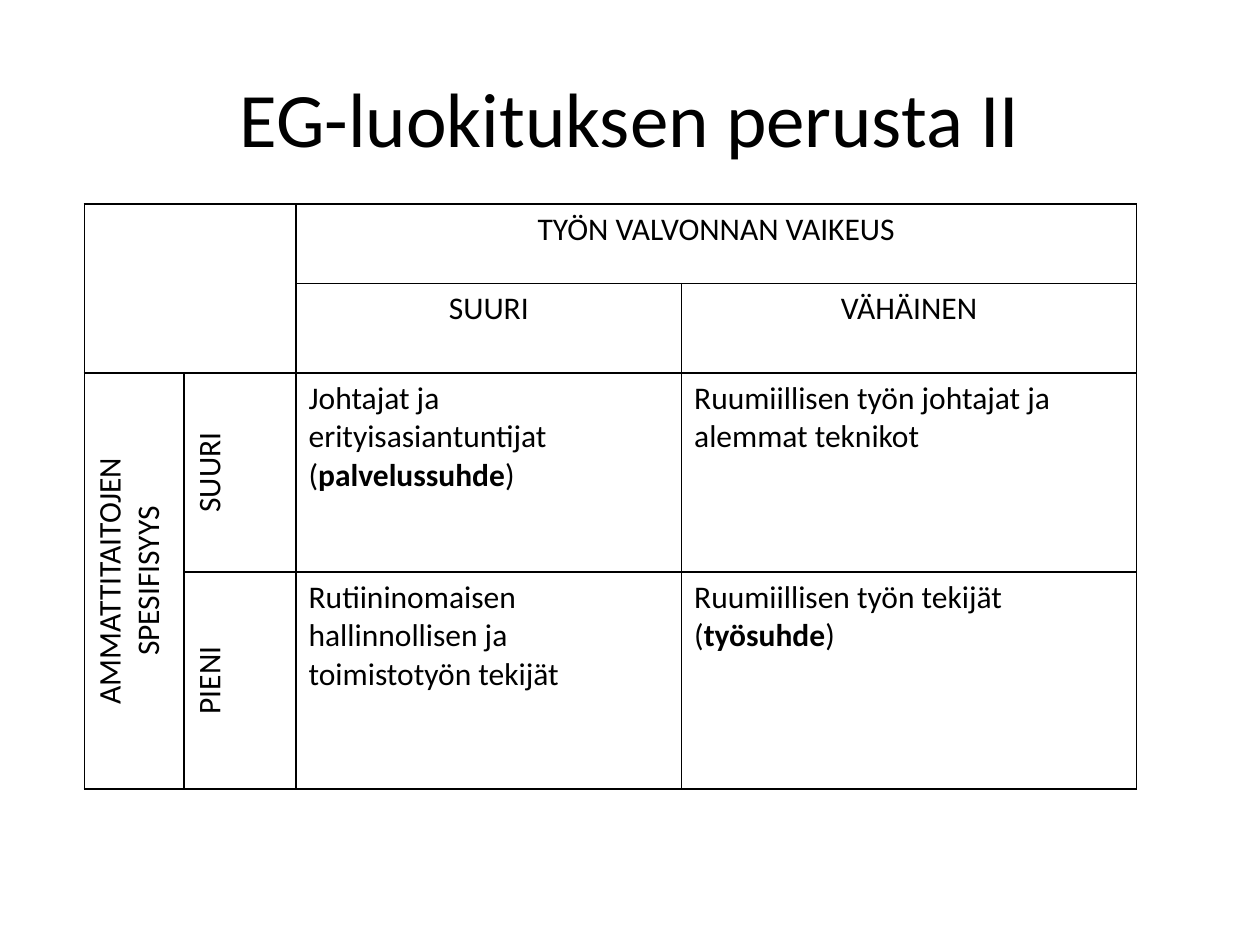
"""Build a slide with a two-way classification table of work relations."""
from lxml import etree
from pptx import Presentation
from pptx import util as u
from pptx.dml.color import RGBColor
from pptx.enum import text
from pptx.oxml.ns import qn

BLACK = RGBColor(0, 0, 0)
FONT = "Calibri"
CENTER, LEFT = text.PP_ALIGN.CENTER, text.PP_ALIGN.LEFT

TITLE = "EG-luokituksen perusta II"
COLUMNS = [0.79, 0.89, 3.06, 3.61]
ROWS = [0.63, 0.71, 1.58, 1.58]
MERGES = [((0, 0), (1, 1)), ((0, 2), (0, 3)), ((2, 0), (3, 0))]
HEADINGS = {
    (0, 2): "TYÖN VALVONNAN VAIKEUS",
    (1, 2): "SUURI",
    (1, 3): "VÄHÄINEN",
}
SIDE_HEADINGS = {
    (2, 0): "AMMATTITAITOJEN SPESIFISYYS",
    (2, 1): "SUURI",
    (3, 1): "PIENI",
}
CLASSES = {
    (2, 2): [("Johtajat ja erityisasiantuntijat (", False), ("palvelussuhde", True), (")", False)],
    (2, 3): [("Ruumiillisen työn johtajat ja alemmat teknikot", False)],
    (3, 2): [("Rutiininomaisen hallinnollisen ja toimistotyön tekijät", False)],
    (3, 3): [("Ruumiillisen työn tekijät (", False), ("työsuhde", True), (")", False)],
}


def write(frame, spans, size, align):
    para = frame.paragraphs[0]
    para.alignment = align
    for words, bold in spans:
        span = para.add_run()
        span.text = words
        span.font.name = FONT
        span.font.size = u.Pt(size)
        span.font.bold = bold
        span.font.color.rgb = BLACK


def outline(cell):
    props = cell._tc.get_or_add_tcPr()
    for side in ("lnL", "lnR", "lnT", "lnB"):
        line = etree.SubElement(props, qn(f"a:{side}"), w=str(u.Pt(1)))
        fill = etree.SubElement(line, qn("a:solidFill"))
        etree.SubElement(fill, qn("a:srgbClr"), val=str(BLACK))
    cell.fill.background()


def add_title(page):
    box = page.shapes.add_textbox(u.Inches(0.5), u.Inches(0.3), u.Inches(9), u.Inches(1.25))
    box.text_frame.word_wrap = True
    box.text_frame.vertical_anchor = text.MSO_ANCHOR.MIDDLE
    write(box.text_frame, [(TITLE, False)], 44, CENTER)


def add_classification(page):
    table = page.shapes.add_table(
        len(ROWS), len(COLUMNS), u.Inches(0.67), u.Inches(1.62),
        u.Inches(sum(COLUMNS)), u.Inches(sum(ROWS))).table
    table.first_row = table.horz_banding = False
    for column, width in zip(table.columns, COLUMNS):
        column.width = u.Inches(width)
    for row, height in zip(table.rows, ROWS):
        row.height = u.Inches(height)
    for cell in table.iter_cells():
        outline(cell)
    for first, last in MERGES:
        table.cell(*first).merge(table.cell(*last))
    for place, words in (HEADINGS | SIDE_HEADINGS).items():
        write(table.cell(*place).text_frame, [(words, False)], 18, CENTER)
    for place in SIDE_HEADINGS:
        table.cell(*place)._tc.get_or_add_tcPr().set("vert", "vert270")
    for place, spans in CLASSES.items():
        write(table.cell(*place).text_frame, spans, 18, LEFT)


def main():
    deck = Presentation()
    deck.slide_width, deck.slide_height = u.Inches(10), u.Inches(7.5)
    page = deck.slides.add_slide(deck.slide_layouts[6])
    add_title(page)
    add_classification(page)
    deck.save("out.pptx")


if __name__ == "__main__":
    main()
